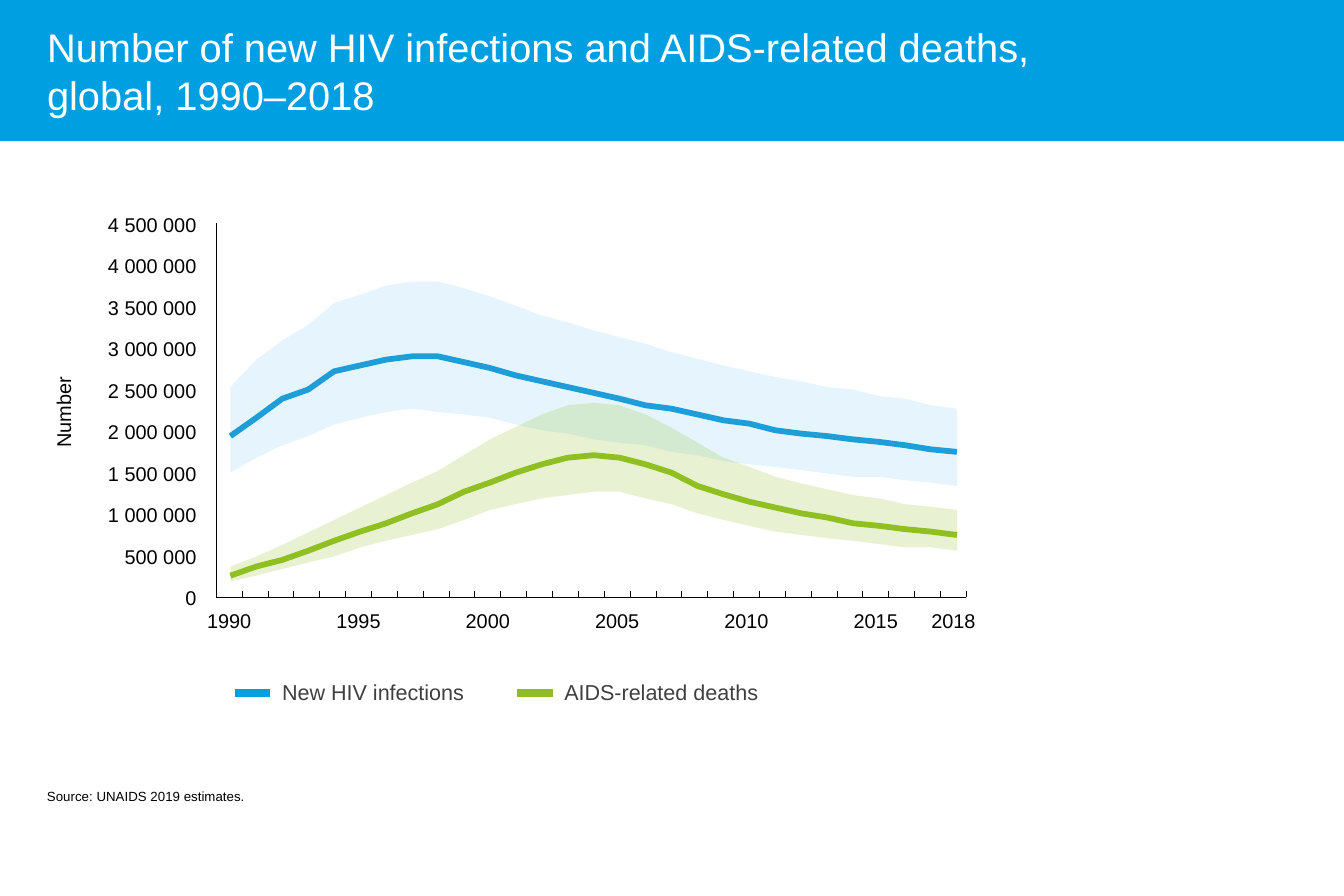
from dataclasses import dataclass
from typing import Any

import pptx
import pptx.dml.color
import pptx.enum.shapes
import pptx.enum.text
import pptx.oxml.ns
import pptx.util

Cm = pptx.util.Cm
Pt = pptx.util.Pt
qn = pptx.oxml.ns.qn
Align = pptx.enum.text.PP_ALIGN
Anchor = pptx.enum.text.MSO_ANCHOR

FONT = "Arial"
BLUE = "009FE2"
BLACK = "000000"
YEARS = range(1990, 2019)
LABELLED_YEARS = [*range(1990, 2016, 5), 2018]
MAXIMUM = 4500
PLOT_LEFT, PLOT_TOP, PLOT_WIDTH, PLOT_HEIGHT = 4.6, 4.75, 15.95, 7.95
PLOT_RIGHT, PLOT_BOTTOM = PLOT_LEFT + PLOT_WIDTH, PLOT_TOP + PLOT_HEIGHT
YEAR_WIDTH = PLOT_WIDTH / len(YEARS)
CURVE_LEFT, CURVE_WIDTH = 4.9, 15.45
TICK_LENGTH = 0.14


@dataclass
class Estimate:
    name: str
    line_color: str
    key_color: str
    band_color: str
    band_opacity: int
    key_left: float
    values: list[int]
    upper: list[int]
    lower: list[int]


ESTIMATES = [
    Estimate(
        "New HIV infections", "1D9ED9", BLUE, "E5F4FD", 100, 5.0,
        [1940, 2160, 2390, 2500, 2720, 2790, 2860, 2900, 2900, 2830,
         2760, 2670, 2600, 2530, 2460, 2390, 2310, 2270, 2200, 2130,
         2090, 2010, 1970, 1940, 1900, 1870, 1830, 1780, 1750],
        [2530, 2860, 3090, 3280, 3540, 3640, 3750, 3800, 3800, 3720,
         3620, 3510, 3390, 3310, 3210, 3130, 3050, 2950, 2870, 2790,
         2720, 2650, 2600, 2530, 2500, 2420, 2390, 2310, 2270],
        [1500, 1680, 1830, 1940, 2080, 2160, 2230, 2270, 2230, 2200,
         2160, 2080, 2010, 1970, 1900, 1860, 1830, 1750, 1710, 1640,
         1600, 1570, 1530, 1490, 1450, 1450, 1410, 1380, 1340],
    ),
    Estimate(
        "AIDS-related deaths", "8FBF21", "8FBE20", "8FBE20", 20, 11.0,
        [260, 370, 450, 560, 680, 790, 890, 1010, 1120, 1270,
         1380, 1500, 1600, 1680, 1710, 1680, 1600, 1500, 1340, 1240,
         1150, 1080, 1010, 960, 890, 860, 820, 790, 750],
        [370, 490, 630, 780, 930, 1080, 1230, 1380, 1520, 1710,
         1900, 2050, 2200, 2310, 2340, 2310, 2200, 2040, 1860, 1680,
         1570, 1450, 1370, 1300, 1230, 1190, 1120, 1090, 1050],
        [190, 260, 340, 420, 490, 600, 680, 750, 820, 930,
         1050, 1120, 1190, 1230, 1270, 1270, 1190, 1120, 1010, 930,
         860, 790, 750, 710, 680, 640, 600, 600, 560],
    ),
]


def rgb(color: str) -> pptx.dml.color.RGBColor:
    return pptx.dml.color.RGBColor.from_string(color)


def value_y(value: int) -> float:
    return PLOT_TOP + PLOT_HEIGHT * (1 - value / MAXIMUM)


def curve_points(values: list[int]) -> list[tuple[int, int]]:
    step = CURVE_WIDTH / (len(values) - 1)
    return [(Cm(CURVE_LEFT + index * step), Cm(value_y(value)))
            for index, value in enumerate(values)]


def write_text(frame: Any, text: str, *, size: float, color: str = BLACK,
               align: Any = Align.LEFT, anchor: Any = Anchor.MIDDLE,
               left_inset: float = 0, wrap: bool = False) -> None:
    frame.auto_size = pptx.enum.text.MSO_AUTO_SIZE.NONE
    frame.word_wrap = wrap
    frame.vertical_anchor = anchor
    frame.margin_left = Cm(left_inset)
    frame.margin_right = frame.margin_top = frame.margin_bottom = 0
    for index, line in enumerate(text.split("\n")):
        paragraph = frame.add_paragraph() if index else frame.paragraphs[0]
        paragraph.alignment = align
        paragraph.space_before = 0
        run = paragraph.add_run()
        run.text = line
        run.font.name = FONT
        run.font.size = Pt(size)
        run.font.color.rgb = rgb(color)


def add_label(slide: Any, text: str, left: float, top: float, width: float,
              height: float, **text_format: Any) -> Any:
    box = slide.shapes.add_textbox(Cm(left), Cm(top), Cm(width), Cm(height))
    write_text(box.text_frame, text, **text_format)
    return box


def add_line(slide: Any, start: tuple[float, float], end: tuple[float, float],
             color: str = BLACK, width: float = 0.5) -> None:
    line = slide.shapes.add_connector(
        pptx.enum.shapes.MSO_CONNECTOR.STRAIGHT,
        Cm(start[0]), Cm(start[1]), Cm(end[0]), Cm(end[1]))
    line.line.color.rgb = rgb(color)
    line.line.width = Pt(width)
    properties = line._element.spPr
    properties.append(properties.makeelement(qn("a:effectLst"), {}))


def add_outline(slide: Any, points: list[tuple[int, int]], close: bool) -> Any:
    builder = slide.shapes.build_freeform(*points[0])
    builder.add_line_segments(points[1:], close=close)
    shape = builder.convert_to_shape()
    shape.shadow.inherit = False
    return shape


def add_band(slide: Any, estimate: Estimate) -> None:
    points = curve_points(estimate.upper) + curve_points(estimate.lower)[::-1]
    band = add_outline(slide, points, close=True)
    band.line.fill.background()
    band.fill.solid()
    band.fill.fore_color.rgb = rgb(estimate.band_color)
    if estimate.band_opacity < 100:
        color = band._element.spPr.find(qn("a:solidFill")).find(qn("a:srgbClr"))
        color.append(color.makeelement(
            qn("a:alpha"), {"val": str(estimate.band_opacity * 1000)}))


def add_curve(slide: Any, estimate: Estimate) -> None:
    curve = add_outline(slide, curve_points(estimate.values), close=False)
    curve.fill.background()
    curve.line.color.rgb = rgb(estimate.line_color)
    curve.line.width = Pt(3.5)


def add_axes(slide: Any) -> None:
    add_line(slide, (PLOT_LEFT, PLOT_TOP), (PLOT_LEFT, PLOT_BOTTOM))
    add_line(slide, (PLOT_LEFT, PLOT_BOTTOM), (PLOT_RIGHT, PLOT_BOTTOM))
    for number in range(1, len(YEARS) + 1):
        x = PLOT_LEFT + number * YEAR_WIDTH
        add_line(slide, (x, PLOT_BOTTOM - TICK_LENGTH), (x, PLOT_BOTTOM))
    for year in LABELLED_YEARS:
        center = PLOT_LEFT + (year - YEARS[0] + 0.5) * YEAR_WIDTH
        add_label(slide, str(year), center - 0.47, 12.95, 0.94, 0.51,
                  size=12, align=Align.CENTER)
    for value in range(0, MAXIMUM + 1, 500):
        text = f"{value * 1000:,}".replace(",", " ")
        add_label(slide, text, 2.28, value_y(value) - 0.24, 1.9, 0.51,
                  size=12, align=Align.RIGHT)
    axis_title = add_label(slide, "Number", 1.09, 8, 0.51, 1.52, size=12)
    axis_title.text_frame._txBody.find(qn("a:bodyPr")).set("vert", "vert270")


def add_key(slide: Any, estimate: Estimate) -> None:
    left, middle = estimate.key_left, 14.73
    add_line(slide, (left, middle), (left + 0.75, middle), estimate.key_color, 5)
    add_label(slide, estimate.name, left + 1, middle - 0.42, 4.4, 0.8,
              size=13, color="404040")


def main() -> None:
    presentation = pptx.Presentation()
    presentation.slide_width = Cm(28.58)
    presentation.slide_height = Cm(19.05)
    slide = presentation.slides.add_slide(presentation.slide_layouts[5])

    title = slide.shapes.title
    title.left, title.top = 0, 0
    title.width, title.height = presentation.slide_width, Cm(3)
    title.fill.solid()
    title.fill.fore_color.rgb = rgb(BLUE)
    write_text(title.text_frame,
               "Number of new HIV infections and AIDS-related deaths,\nglobal, 1990–2018",
               size=24, color="FFFFFF", left_inset=1, wrap=True)

    for estimate in ESTIMATES:
        add_band(slide, estimate)
    add_axes(slide)
    for estimate in ESTIMATES:
        add_key(slide, estimate)
    for estimate in reversed(ESTIMATES):
        add_curve(slide, estimate)
    add_label(slide, "Source: UNAIDS 2019 estimates.", 1, 16.75, 4.25, 0.33,
              size=8, anchor=Anchor.TOP)
    presentation.save("out.pptx")


if __name__ == "__main__":
    main()
